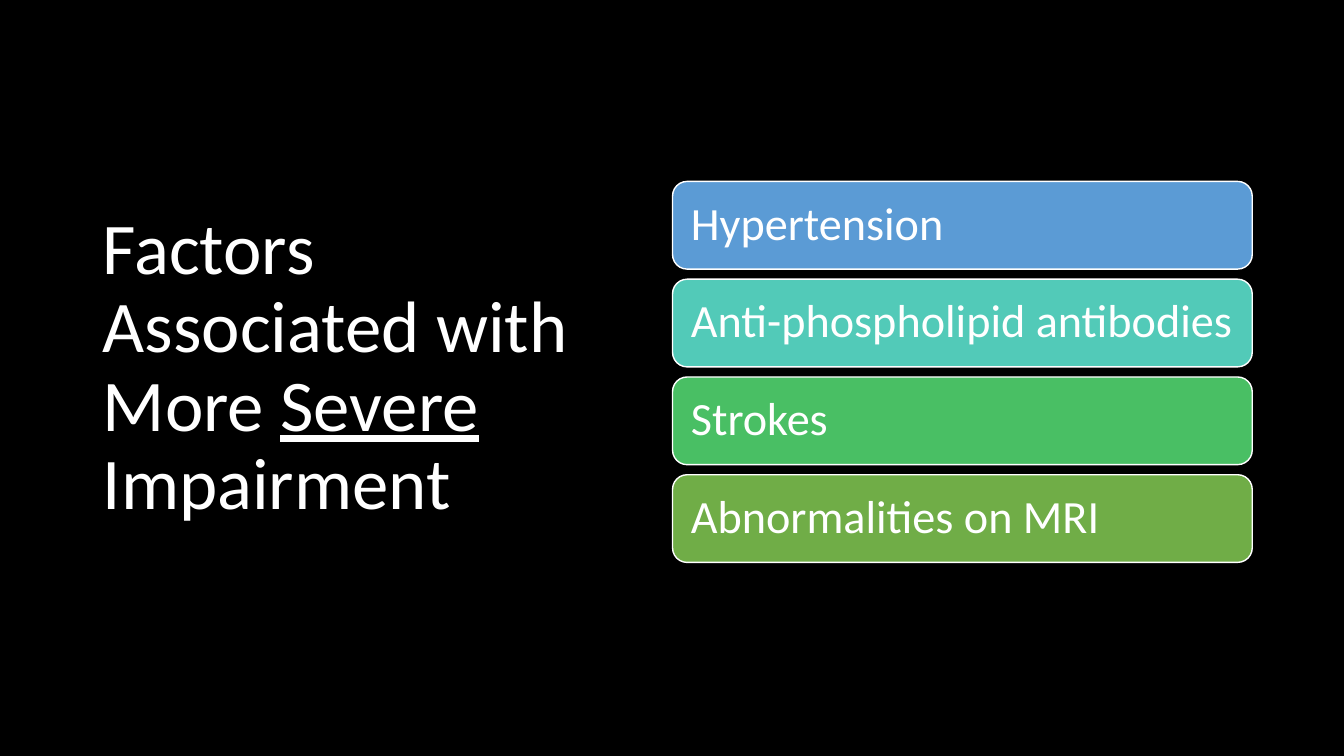
import pptx
import pptx.util
from pptx.dml.color import RGBColor
from pptx.enum.shapes import MSO_SHAPE
from pptx.enum.text import MSO_ANCHOR, MSO_AUTO_SIZE, PP_ALIGN

SLIDE_WIDTH = pptx.util.Inches(13.33)
SLIDE_HEIGHT = pptx.util.Inches(7.5)
BLACK = RGBColor(0x00, 0x00, 0x00)
WHITE = RGBColor(0xFF, 0xFF, 0xFF)
FONT = "Calibri"

FACTORS = [
    ("Hypertension", RGBColor(0x5B, 0x9B, 0xD5)),
    ("Anti-phospholipid antibodies", RGBColor(0x52, 0xCA, 0xB8)),
    ("Strokes", RGBColor(0x49, 0xBF, 0x64)),
    ("Abnormalities on MRI", RGBColor(0x70, 0xAD, 0x47)),
]
BAR_LEFT, BAR_WIDTH = 6.67, 5.75
FIRST_BAR_TOP, BAR_HEIGHT, BAR_PITCH = 1.8, 0.87, 0.97


def write_text(frame, *runs, size, inset):
    """Fill a frame with one paragraph of (text, underlined) runs."""
    frame.word_wrap = True
    frame.auto_size = MSO_AUTO_SIZE.NONE
    frame.vertical_anchor = MSO_ANCHOR.MIDDLE
    frame.margin_left = frame.margin_right = pptx.util.Inches(inset)
    frame.margin_top = frame.margin_bottom = pptx.util.Inches(0.05)
    paragraph = frame.paragraphs[0]
    paragraph.alignment = PP_ALIGN.LEFT
    paragraph.line_spacing = 0.9
    for text, underlined in runs:
        run = paragraph.add_run()
        run.text = text
        run.font.name = FONT
        run.font.size = pptx.util.Pt(size)
        run.font.color.rgb = WHITE
        run.font.underline = underlined


def place_title(slide):
    title = slide.shapes.title
    title.left, title.top = pptx.util.Inches(0.92), pptx.util.Inches(0.61)
    title.width, title.height = pptx.util.Inches(5.32), pptx.util.Inches(6.09)
    write_text(
        title.text_frame,
        ("Factors Associated with More ", False),
        ("Severe", True),
        (" Impairment", False),
        size=52,
        inset=0.1,
    )


def add_factor_bar(slide, row, factor, color):
    bar = slide.shapes.add_shape(
        MSO_SHAPE.ROUNDED_RECTANGLE,
        pptx.util.Inches(BAR_LEFT),
        pptx.util.Inches(FIRST_BAR_TOP + row * BAR_PITCH),
        pptx.util.Inches(BAR_WIDTH),
        pptx.util.Inches(BAR_HEIGHT),
    )
    bar.shadow.inherit = False
    bar.fill.solid()
    bar.fill.fore_color.rgb = color
    bar.line.color.rgb = WHITE
    bar.line.width = pptx.util.Pt(1)
    write_text(bar.text_frame, (factor, False), size=33, inset=0.14)


def main():
    deck = pptx.Presentation()
    deck.slide_width, deck.slide_height = SLIDE_WIDTH, SLIDE_HEIGHT
    slide = deck.slides.add_slide(deck.slide_layouts.get_by_name("Title Only"))
    slide.background.fill.solid()
    slide.background.fill.fore_color.rgb = BLACK
    place_title(slide)
    for row, (factor, color) in enumerate(FACTORS):
        add_factor_bar(slide, row, factor, color)
    deck.save("out.pptx")


if __name__ == "__main__":
    main()
